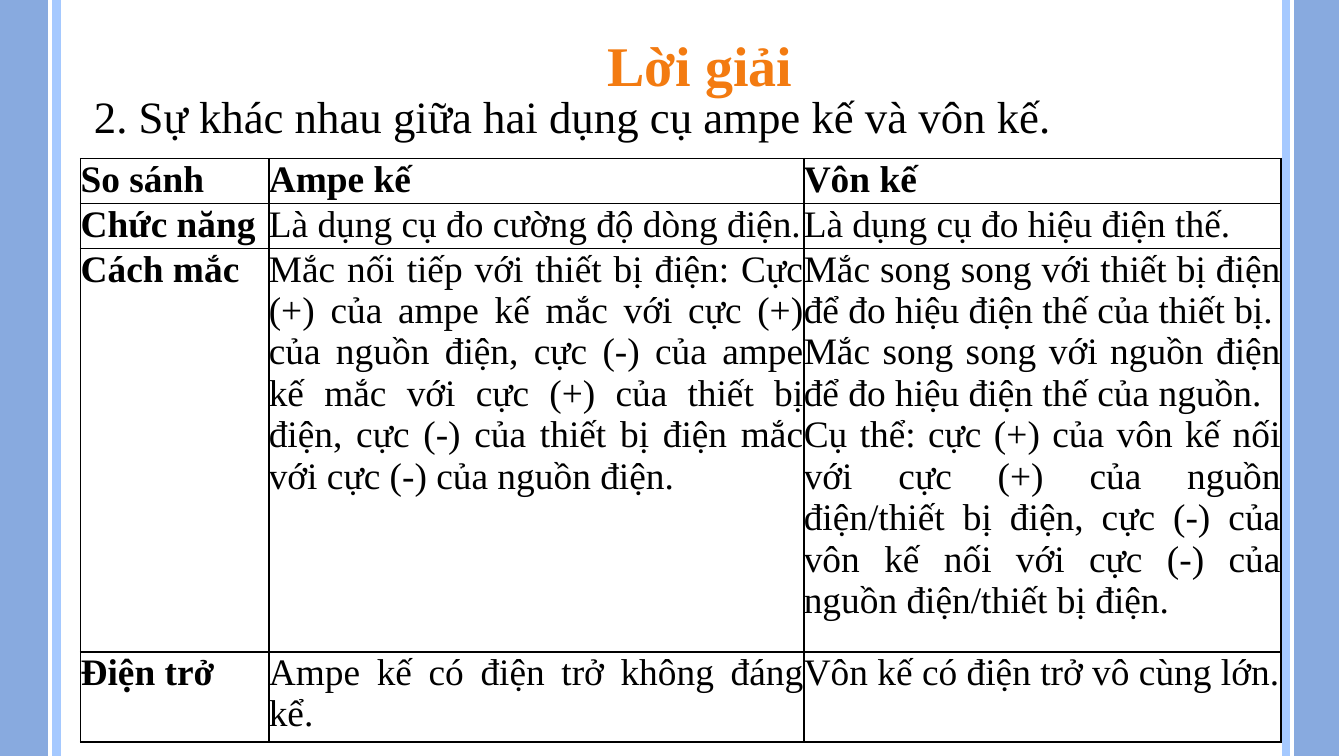
from pptx import Presentation
from pptx.dml.color import RGBColor
from pptx.enum.shapes import MSO_SHAPE
from pptx.enum.text import MSO_ANCHOR, MSO_AUTO_SIZE, PP_ALIGN
from pptx.oxml import parse_xml
from pptx.oxml.ns import nsdecls
from pptx.util import Pt

COLORS = {"title": "F37B11", "text": "000000", "border": "000000",
          "dark_bar": "88AADF", "light_bar": "A5C9FF", "bar_line": "FFFFFF"}
FONT = "Times New Roman"
SLIDE_WIDTH, SLIDE_HEIGHT = 720, 405

# Left, width and colour of each side bar, from back to front
BARS = [(-3.6, 30.2, "dark_bar"), (27, 6.5, "light_bar"),
        (688.3, 30.2, "dark_bar"), (685.8, 6.5, "light_bar")]
BAR_OVERHANG = 5

COLUMN_WIDTHS = [100.8, 286.6, 255.6]
ROW_HEIGHTS = [24.1, 24.1, 215.9, 48.2]
ROWS = [
    ["So sánh", "Ampe kế", "Vôn kế"],
    ["Chức năng", "Là dụng cụ đo cường độ dòng điện.", "Là dụng cụ đo hiệu điện thế."],
    ["Cách mắc",
     "Mắc nối tiếp với thiết bị điện: Cực (+) của ampe kế mắc với cực (+) của nguồn điện, "
     "cực (-) của ampe kế mắc với cực (+) của thiết bị điện, "
     "cực (-) của thiết bị điện mắc với cực (-) của nguồn điện.",
     "Mắc song song với thiết bị điện để đo hiệu điện thế của thiết bị.\n"
     "Mắc song song với nguồn điện để đo hiệu điện thế của nguồn.\n"
     "Cụ thể: cực (+) của vôn kế nối với cực (+) của nguồn điện/thiết bị điện, "
     "cực (-) của vôn kế nối với cực (-) của nguồn điện/thiết bị điện."],
    ["Điện trở", "Ampe kế có điện trở không đáng kể.", "Vôn kế có điện trở vô cùng lớn."],
]


def color(name):
    return RGBColor.from_string(COLORS[name])


def write_text(text_frame, text, size=20, bold=False, color_name="text",
               align=PP_ALIGN.JUSTIFY):
    text_frame.text = text
    for paragraph in text_frame.paragraphs:
        paragraph.alignment = align
        for run in paragraph.runs:
            run.font.name = FONT
            run.font.size = Pt(size)
            run.font.bold = bold
            run.font.color.rgb = color(color_name)


def add_bar(slide, left, width, color_name):
    bar = slide.shapes.add_shape(
        MSO_SHAPE.RECTANGLE, Pt(left), Pt(-BAR_OVERHANG),
        Pt(width), Pt(SLIDE_HEIGHT + 2 * BAR_OVERHANG))
    bar.shadow.inherit = False
    bar.fill.solid()
    bar.fill.fore_color.rgb = color(color_name)
    bar.line.color.rgb = color("bar_line")
    bar.line.width = Pt(2)


def set_title(slide, text):
    title = slide.shapes.title
    title.left, title.top, title.width, title.height = Pt(320.4), Pt(13.7), Pt(233.3), Pt(41.8)
    frame = title.text_frame
    frame.margin_left = frame.margin_right = Pt(5)
    frame.margin_top = frame.margin_bottom = Pt(2.9)
    frame.vertical_anchor = MSO_ANCHOR.TOP
    frame.word_wrap = True
    frame.auto_size = MSO_AUTO_SIZE.SHAPE_TO_FIT_TEXT
    write_text(frame, text, size=30, bold=True, color_name="title", align=PP_ALIGN.LEFT)


def add_heading(slide, text):
    frame = slide.shapes.add_textbox(Pt(43.2), Pt(43.9), Pt(531.4), Pt(36)).text_frame
    frame.word_wrap = False
    frame.auto_size = MSO_AUTO_SIZE.SHAPE_TO_FIT_TEXT
    frame.vertical_anchor = MSO_ANCHOR.MIDDLE
    write_text(frame, text, size=24)


def set_borders(cell):
    properties = cell._tc.get_or_add_tcPr()
    for index, side in enumerate(("lnL", "lnR", "lnT", "lnB")):
        # Borders come before the fill in the cell properties
        properties.insert(index, parse_xml(
            f'<a:{side} {nsdecls("a")} w="{Pt(1)}"><a:solidFill>'
            f'<a:srgbClr val="{COLORS["border"]}"/></a:solidFill></a:{side}>'))


def add_comparison_table(slide):
    table = slide.shapes.add_table(
        len(ROWS), len(COLUMN_WIDTHS), Pt(43.2), Pt(85),
        Pt(sum(COLUMN_WIDTHS)), Pt(sum(ROW_HEIGHTS))).table
    table.horz_banding = False
    for column, width in zip(table.columns, COLUMN_WIDTHS):
        column.width = Pt(width)
    for row_index, (row, height) in enumerate(zip(table.rows, ROW_HEIGHTS)):
        row.height = Pt(height)
        for column_index, cell in enumerate(row.cells):
            cell.margin_left = cell.margin_right = Pt(0)
            cell.margin_top = cell.margin_bottom = Pt(0)
            cell.fill.background()
            set_borders(cell)
            # The first row and the first column hold the labels
            write_text(cell.text_frame, ROWS[row_index][column_index],
                       bold=row_index == 0 or column_index == 0)


def main():
    presentation = Presentation()
    presentation.slide_width, presentation.slide_height = Pt(SLIDE_WIDTH), Pt(SLIDE_HEIGHT)
    slide = presentation.slides.add_slide(presentation.slide_layouts[5])
    set_title(slide, "Lời giải")
    for left, width, color_name in BARS:
        add_bar(slide, left, width, color_name)
    add_comparison_table(slide)
    add_heading(slide, "2. Sự khác nhau giữa hai dụng cụ ampe kế và vôn kế.")
    presentation.save("out.pptx")


if __name__ == "__main__":
    main()
